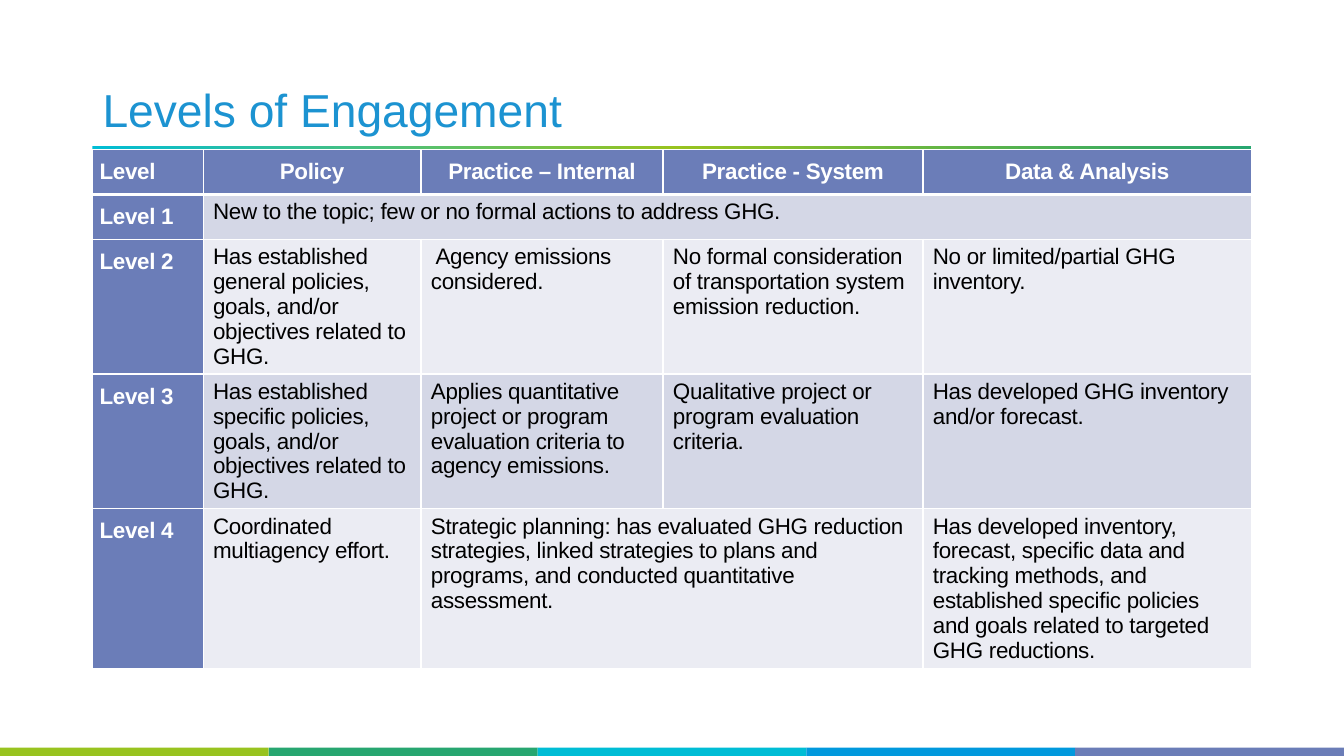
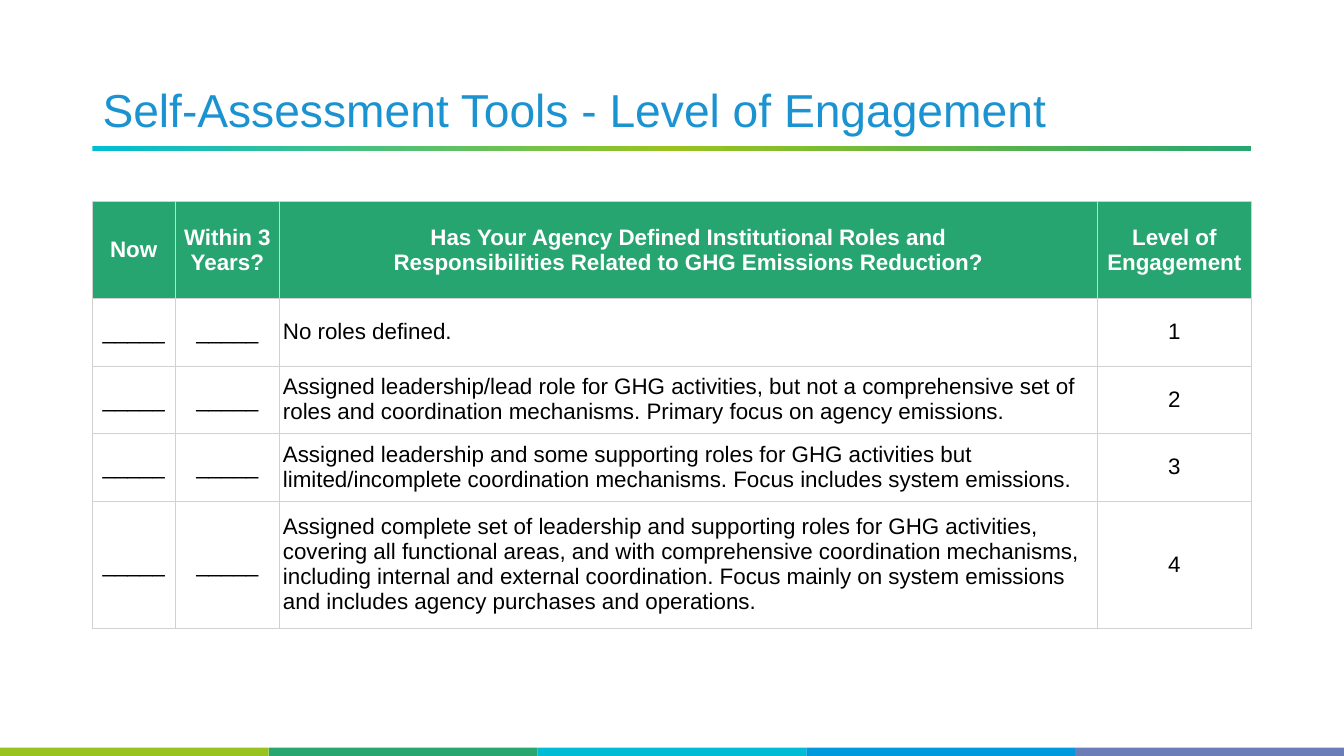
import copy

import lxml.etree
import pptx
import pptx.dml.color
import pptx.enum.shapes
import pptx.enum.text
import pptx.oxml.ns
import pptx.util

Cm = pptx.util.Cm
Pt = pptx.util.Pt
qn = pptx.oxml.ns.qn
rgb = pptx.dml.color.RGBColor.from_string
ALIGN = pptx.enum.text.PP_ALIGN
ANCHOR = pptx.enum.text.MSO_ANCHOR


class Theme:
    font = "Arial"
    head = Pt(33)
    text = Pt(16)
    title = "1C93D1"
    white = "FFFFFF"
    black = "000000"
    green = "27A570"
    grey = "D1D1D1"
    blue = "6B7DB8"
    bands = ["EBECF3", "D4D7E6"]
    rule = ["00BDD5", "98C31F", "27A670"]
    strip = ["98C31F", "27A670", "00BDD5", "0199DD", "6B7DB7"]


WIDE, HIGH = 33.87, 19.05
LEFT, SPAN = 2.33, 29.21


def put(thing, **values):
    """Set each named value on the thing."""
    for name, value in values.items():
        setattr(thing, name, value)


def edge(cell, side, tint, width):
    """Draw one border of a cell; call before the cell is filled."""
    line = lxml.etree.SubElement(cell._tc.get_or_add_tcPr(), qn("a:ln" + side),
                                 w=str(int(Pt(width))))
    fill = lxml.etree.SubElement(line, qn("a:solidFill"))
    lxml.etree.SubElement(fill, qn("a:srgbClr"), val=tint)


deck = pptx.Presentation()
put(deck, slide_width=Cm(WIDE), slide_height=Cm(HIGH))
layout = deck.slide_layouts[5]
put(layout.placeholders[0], left=Cm(LEFT), top=Cm(0.28), width=Cm(SPAN), height=Cm(3.3))

# Slide contents
levels = dict(
    title="Levels of Engagement", top=3.77,
    cols=[2.79, 5.49, 6.1, 6.55, 8.28], rows=[1.13, 1.13, 3.39, 3.39, 4.01],
    cells=[
        ["Level", "Policy", "Practice – Internal", "Practice - System", "Data & Analysis"],
        ["Level 1", "New to the topic; few or no formal actions to address GHG.", "", "", ""],
        ["Level 2",
         "Has established general policies, goals, and/or objectives related to GHG.",
         " Agency emissions considered.",
         "No formal consideration of transportation system emission reduction.",
         "No or limited/partial GHG inventory."],
        ["Level 3",
         "Has established specific policies, goals, and/or objectives related to GHG.",
         "Applies quantitative project or program evaluation criteria to agency emissions.",
         "Qualitative project or program evaluation criteria.",
         "Has developed GHG inventory and/or forecast."],
        ["Level 4", "Coordinated multiagency effort.",
         "Strategic planning: has evaluated GHG reduction strategies, linked strategies "
         "to plans and programs, and conducted quantitative assessment.", "",
         "Has developed inventory, forecast, specific data and tracking methods, and "
         "established specific policies and goals related to targeted GHG reductions."],
    ],
    spans=[(1, 1, 4), (4, 2, 3)], key=True, tint=Theme.blue, bands=Theme.bands,
    line=Theme.white, width=1, under=3, pads=(0.25, 0.13), keypads=(0.18, 0.25),
    anchor=ANCHOR.TOP, mid=[], space="-20")

blank = "_____"
roles = [
    "No roles defined.",
    "Assigned leadership/lead role for GHG activities, but not a comprehensive set of "
    "roles and coordination mechanisms. Primary focus on agency emissions.",
    "Assigned leadership and some supporting roles for GHG activities but limited/"
    "incomplete coordination mechanisms. Focus includes system emissions.",
    "Assigned complete set of leadership and supporting roles for GHG activities, "
    "covering all functional areas, and with comprehensive coordination mechanisms, "
    "including internal and external coordination. Focus mainly on system emissions "
    "and includes agency purchases and operations.",
]
tools = dict(
    title="Self-Assessment Tools - Level of Engagement", top=5.08,
    cols=[2.08, 2.64, 20.6, 3.89], rows=[2.44, 1.7, 1.7, 1.7, 3.2],
    cells=[["Now", "Within 3 Years?",
            "Has Your Agency Defined Institutional Roles and\n"
            "Responsibilities Related to GHG Emissions Reduction?",
            "Level of Engagement"]]
    + [[blank, blank, role, str(n)] for n, role in enumerate(roles, 1)],
    spans=[], key=False, tint=Theme.green, bands=[Theme.white],
    line=Theme.grey, width=0.5, under=0.5, pads=(0.08, 0.08), keypads=(0.08, 0.08),
    anchor=ANCHOR.MIDDLE, mid=[0, 1, 3], space="0")

# Titles and tables
for page in (levels, tools):
    slide = deck.slides.add_slide(layout)
    frame = slide.shapes.title.text_frame
    put(frame, text=page["title"], vertical_anchor=ANCHOR.BOTTOM, word_wrap=True,
        auto_size=pptx.enum.text.MSO_AUTO_SIZE.NONE)
    para = frame.paragraphs[0]
    put(para, alignment=ALIGN.LEFT, line_spacing=0.9)
    put(para.font, name=Theme.font, size=Theme.head)
    para.font.color.rgb = rgb(Theme.title)

    cols, rows = page["cols"], page["rows"]
    table = slide.shapes.add_table(len(rows), len(cols), Cm(LEFT), Cm(page["top"]),
                                   Cm(SPAN), Cm(sum(rows))).table
    for col, width in zip(table.columns, cols):
        col.width = Cm(width)
    for row, height in zip(table.rows, rows):
        row.height = Cm(height)
    for r, start, stop in page["spans"]:
        table.cell(r, start).merge(table.cell(r, stop))

    for r, texts in enumerate(page["cells"]):
        for c, text in enumerate(texts):
            cell = table.cell(r, c)
            head = r == 0
            key = head or (page["key"] and c == 0)
            for side in "LRTB":
                thick = (side, r) in (("B", 0), ("T", 1))
                edge(cell, side, page["line"], page["under" if thick else "width"])
            cell.fill.solid()
            bands = page["bands"]
            cell.fill.fore_color.rgb = rgb(page["tint"] if key else bands[r % len(bands)])
            if cell.is_spanned:
                continue
            x, y = page["keypads" if key else "pads"]
            put(cell, vertical_anchor=page["anchor"], margin_left=Cm(x),
                margin_right=Cm(x), margin_top=Cm(y), margin_bottom=Cm(y))
            para = cell.text_frame.paragraphs[0]
            mid = c in page["mid"] or (head and c > 0)
            para.alignment = ALIGN.CENTER if mid else ALIGN.LEFT
            for n, line in enumerate(text.split("\n")):
                if n:
                    para.add_line_break()
                run = para.add_run()
                run.text = line
                put(run.font, name=Theme.font, size=Theme.text, bold=key)
                run.font.color.rgb = rgb(Theme.white if key else Theme.black)
                run._r.get_or_add_rPr().set("spc", page["space"])

# Title rule and footer strip, moved to the shared layout
part = WIDE / len(Theme.strip)
boxes = [(LEFT, 3.68, SPAN, 0.13, None)]
boxes += [(n * part, 18.84, part, 0.21, tint) for n, tint in enumerate(Theme.strip)]
for x, y, w, h, tint in boxes:
    bar = slide.shapes.add_shape(pptx.enum.shapes.MSO_SHAPE.RECTANGLE,
                                 Cm(x), Cm(y), Cm(w), Cm(h))
    bar.shadow.inherit = False
    bar.line.fill.background()
    if tint:
        bar.fill.solid()
        bar.fill.fore_color.rgb = rgb(tint)
    else:
        bar.fill.gradient()
        bar.fill.gradient_angle = 0
        stops = bar.element.find(".//" + qn("a:gsLst"))
        stops.append(copy.deepcopy(stops[-1]))
        for n, (stop, hue) in enumerate(zip(bar.fill.gradient_stops, Theme.rule)):
            stop.position = n / 2
            stop.color.rgb = rgb(hue)
    layout.shapes.element.append(bar.element)

deck.save("out.pptx")
